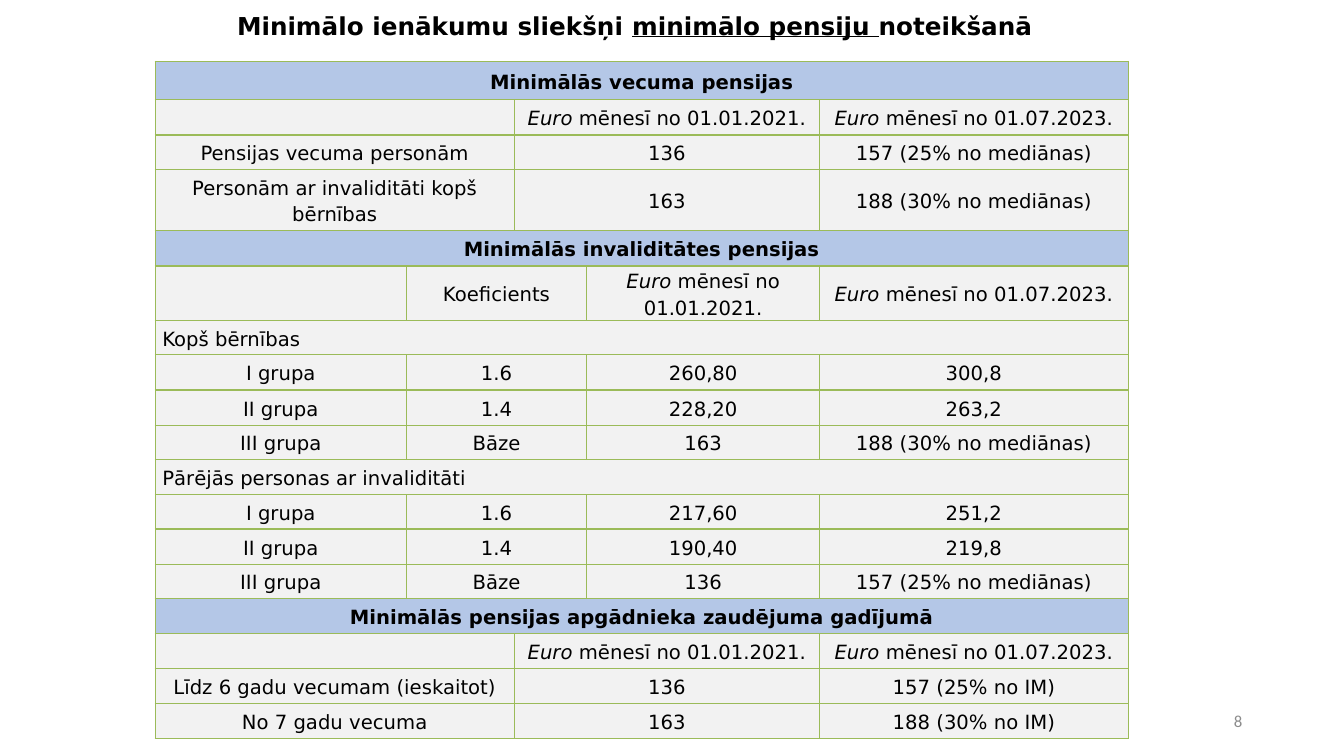
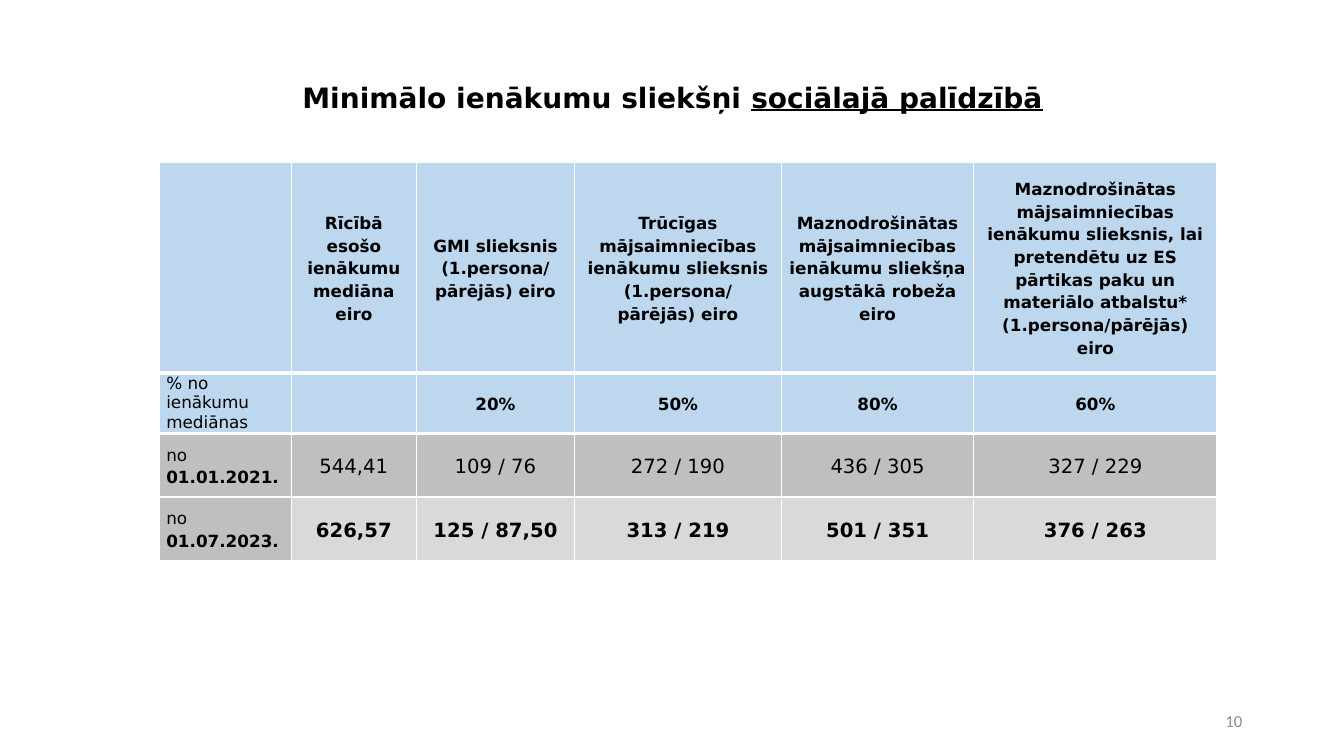
from itertools import accumulate
from lxml import etree
from pptx import Presentation
from pptx.dml.color import RGBColor as Rgb
from pptx.enum.text import MSO_ANCHOR as Anchor, MSO_AUTO_SIZE as Fit, PP_ALIGN as Align
from pptx.oxml.ns import qn
from pptx.util import Pt

PX = 9144
COLORS = {
    "text": "000000", "foot": "8C8C8C", "line": "9BBB59", "white": "FFFFFF",
    "band": "B4C7E7", "body": "F2F2F2", "head": "BDD7EE",
    "old": "BFBFBF", "new": "D9D9D9",
}
FONT = "DejaVu Sans"
SPANS = {1: [5], 3: [2, 2, 1], 4: [1, 2, 1, 1]}

OLD = "|Euro| mēnesī no 01.01.2021."
NEW = "|Euro| mēnesī no 01.07.2023."
PENSIONS = [
    (38, ["Minimālās vecuma pensijas"]),
    (35, ["", OLD, NEW]),
    (34, ["Pensijas vecuma personām", "136", "157 (25% no mediānas)"]),
    (61, ["Personām ar invaliditāti kopš bērnības", "163", "188 (30% no mediānas)"]),
    (35, ["Minimālās invaliditātes pensijas"]),
    (54, ["", "Koeficients", OLD, NEW]),
    (34, ["Kopš bērnības"]),
    (35, ["I grupa", "1.6", "260,80", "300,8"]),
    (35, ["II grupa", "1.4", "228,20", "263,2"]),
    (34, ["III grupa", "Bāze", "163", "188 (30% no mediānas)"]),
    (35, ["Pārējās personas ar invaliditāti"]),
    (34, ["I grupa", "1.6", "217,60", "251,2"]),
    (35, ["II grupa", "1.4", "190,40", "219,8"]),
    (34, ["III grupa", "Bāze", "136", "157 (25% no mediānas)"]),
    (35, ["Minimālās pensijas apgādnieka zaudējuma gadījumā"]),
    (34, ["", OLD, NEW]),
    (35, ["Līdz 6 gadu vecumam (ieskaitot)", "136", "157 (25% no IM)"]),
    (35, ["No 7 gadu vecuma", "163", "188 (30% no IM)"]),
]
AID = [
    (209, ["", "Rīcībā esošo ienākumu mediāna eiro",
           "GMI slieksnis\n(1.persona/\npārējās) eiro",
           "Trūcīgas mājsaimniecības ienākumu slieksnis (1.persona/\npārējās) eiro",
           "Maznodrošinātas mājsaimniecības ienākumu sliekšņa augstākā robeža eiro",
           "Maznodrošinātas mājsaimniecības ienākumu slieksnis, lai pretendētu uz ES "
           "pārtikas paku un materiālo atbalstu* (1.persona/pārējās) eiro"]),
    (50, ["% no ienākumu mediānas", "", "20%", "50%", "80%", "60%"]),
    (63, ["no |01.01.2021.|", "544,41", "109 / 76", "272 / 190", "436 / 305", "327 / 229"]),
    (63, ["no |01.07.2023.|", "626,57", "125 / 87,50", "313 / 219", "501 / 351", "376 / 263"]),
]


def write(frame, text, size, align=Align.CENTER, bold=False, gap=1.0,
          mark="bold", color="text", font=FONT):
    for n, line in enumerate(text.split("\n")):
        para = frame.add_paragraph() if n else frame.paragraphs[0]
        para.alignment, para.line_spacing = align, gap
        para.font.size, para.font.name, para.font.bold = Pt(size), font, bold
        para.font.color.rgb = Rgb.from_string(COLORS[color])
        for k, part in enumerate(line.split("|")):
            if part:
                run = para.add_run()
                run.text = part
                if k % 2:
                    setattr(run.font, mark, True)


def place(shape, *box):
    shape.left, shape.top, shape.width, shape.height = (v * PX for v in box)


def add_page(deck, title, box, size, anchor, gap, number):
    slide = deck.slides.add_slide(deck.slide_layouts[5])
    head = slide.shapes.title
    place(head, *box)
    frame = head.text_frame
    frame.auto_size, frame.vertical_anchor = Fit.NONE, anchor
    write(frame, title, size, bold=True, gap=gap, mark="underline")
    foot = slide.shapes.add_textbox(942 * PX, 695 * PX, 300 * PX, 40 * PX).text_frame
    foot.word_wrap, foot.vertical_anchor = True, Anchor.MIDDLE
    write(foot, number, 12, Align.RIGHT, color="foot", font="Calibri")
    return slide


def add_grid(slide, left, top, cols, rows):
    table = slide.shapes.add_table(len(rows), len(cols), left * PX, top * PX,
                                   sum(cols) * PX, sum(rows) * PX).table
    table.first_row = table.horz_banding = False
    for col, wide in zip(table.columns, cols):
        col.width = wide * PX
    for row, high in zip(table.rows, rows):
        row.height = high * PX
    return table


def style(cell, fill, line, above=1, below=1):
    cell.fill.solid()
    cell.fill.fore_color.rgb = Rgb.from_string(COLORS[fill])
    cell.vertical_anchor = Anchor.MIDDLE
    cell.margin_left = cell.margin_right = 7 * PX
    cell.margin_top = cell.margin_bottom = 0
    props = cell._tc.get_or_add_tcPr()
    for n, (side, wide) in enumerate(zip("LRTB", (1, 1, above, below))):
        edge = etree.Element(qn(f"a:ln{side}"), w=str(Pt(wide)))
        paint = etree.SubElement(edge, qn("a:solidFill"))
        etree.SubElement(paint, qn("a:srgbClr"), val=COLORS[line])
        props.insert(n, edge)


def fill_pensions(slide):
    grid = add_grid(slide, 154, 61, [249, 107, 72, 231, 306], [h for h, _ in PENSIONS])
    for r, (_, texts) in enumerate(PENSIONS):
        band = texts[0].startswith("Minimālās")
        group = len(texts) == 1 and not band
        for c in range(5):
            style(grid.cell(r, c), "band" if band else "body", "line")
        spans = SPANS[len(texts)]
        for text, span, c in zip(texts, spans, accumulate(spans, initial=0)):
            cell = grid.cell(r, c)
            if span > 1:
                cell.merge(grid.cell(r, c + span - 1))
            write(cell.text_frame, text, 14, Align.LEFT if group else Align.CENTER,
                  bold=band, gap=1.15, mark="italic")


def fill_aid(slide):
    grid = add_grid(slide, 158, 161, [131, 124, 157, 205, 191, 241], [h for h, _ in AID])
    fills = ["head", "head", "old", "new"]
    edges = [1, 3, 3, 1, 1]
    for r, (_, texts) in enumerate(AID):
        for c, text in enumerate(texts):
            cell = grid.cell(r, c)
            side = c == 0
            style(cell, "old" if side and r > 1 else fills[r], "white", edges[r], edges[r + 1])
            align = (Align.JUSTIFY if r > 1 else Align.LEFT) if side else Align.CENTER
            write(cell.text_frame, text, 14 if r > 1 and not side else 12, align,
                  bold=not side and r != 2, gap=1.0 if side and r == 1 else 1.15)


def main():
    deck = Presentation()
    deck.slide_width, deck.slide_height = 1333 * PX, 750 * PX
    fill_pensions(add_page(
        deck, "Minimālo ienākumu sliekšņi |minimālo pensiju |noteikšanā",
        (181, 6, 897, 54), 17.6, Anchor.TOP, 1.0, "8"))
    fill_aid(add_page(
        deck, "Minimālo ienākumu sliekšņi |sociālajā palīdzībā|",
        (64, 77, 1206, 44), 20, Anchor.MIDDLE, 0.9, "10"))
    deck.save("out.pptx")


if __name__ == "__main__":
    main()
